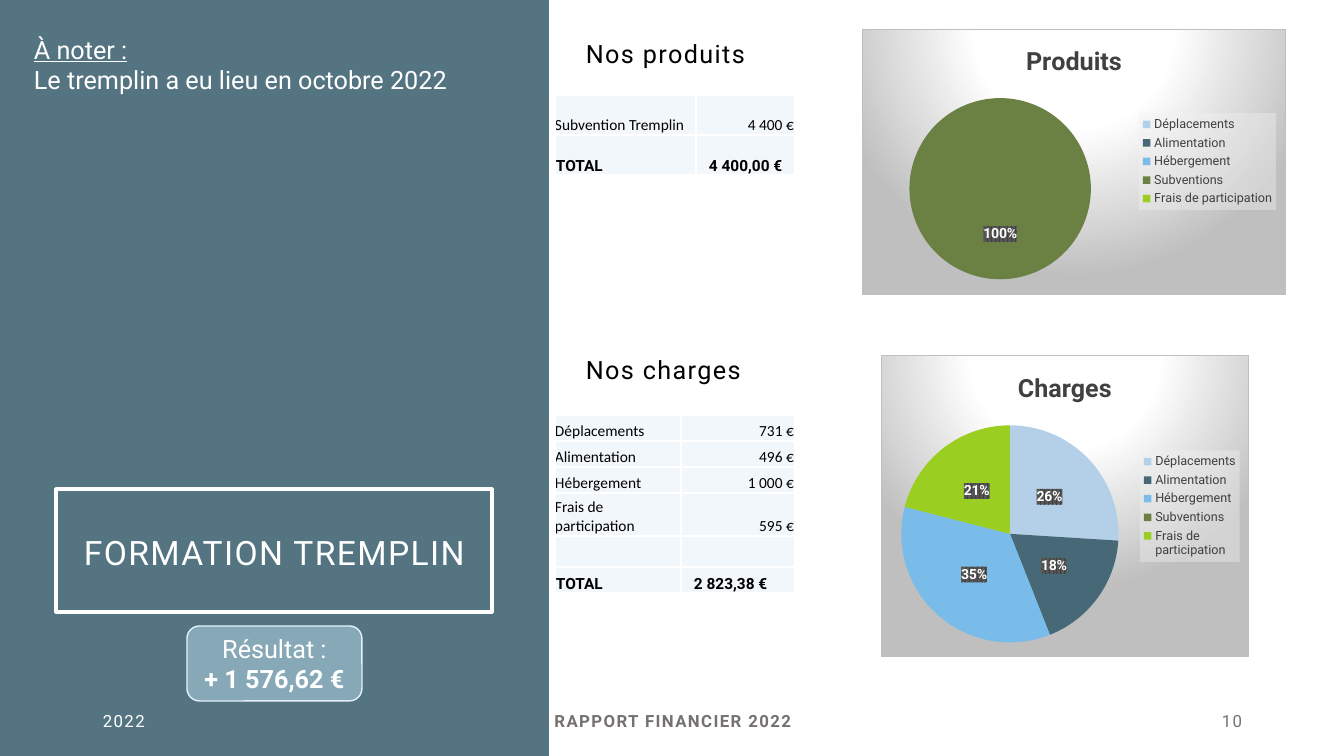
"""Build the financial report slide about the Tremplin training."""
from pptx import Presentation
from pptx.chart.data import CategoryChartData
from pptx.dml.color import RGBColor
from pptx.enum.chart import XL_CHART_TYPE, XL_LABEL_POSITION, XL_LEGEND_POSITION
from pptx.enum.shapes import MSO_SHAPE as SHAPE
from pptx.enum.text import MSO_ANCHOR as ANCHOR, PP_ALIGN as ALIGN
from pptx.oxml import parse_xml
from pptx.oxml.ns import nsdecls
from pptx.util import Emu, Pt

PX_PER_INCH = 100.8
CATEGORIES = ["Déplacements", "Alimentation", "Hébergement", "Subventions",
              "Frais de participation"]
SLICE_COLOURS = ["B4D0E9", "476977", "79BBE9", "6B8043", "9ACF21"]


def px(length):
    return Emu(round(length * 914400 / PX_PER_INCH))


def box_emu(box):
    return [px(length) for length in box]


def rgb(value):
    return RGBColor.from_string(value)


def solid_xml(colour, alpha=100):
    return (f'<a:solidFill {nsdecls("a")}><a:srgbClr val="{colour}">'
            f'<a:alpha val="{alpha * 1000}"/></a:srgbClr></a:solidFill>')


def chart_fill(fill, line=""):
    return parse_xml(f'<c:spPr {nsdecls("c", "a")}>{fill}{line}</c:spPr>')


def style_font(font, size, colour, bold=False, name="Roboto"):
    font.name, font.size, font.bold = name, Pt(size), bold
    font.color.rgb = rgb(colour)


def write(frame, text, size, colour, align=ALIGN.LEFT, bold=False, name="Roboto",
          spacing=0, line_spacing=None):
    frame.word_wrap = True
    frame.text = text
    for paragraph in frame.paragraphs:
        paragraph.alignment = align
        if line_spacing:
            paragraph.line_spacing = line_spacing
        for run in paragraph.runs:
            style_font(run.font, size, colour, bold, name)
            if spacing:
                run.font._element.set("spc", str(spacing * 100))


def add_label(slide, box, text, size, colour, anchor=ANCHOR.MIDDLE, **style):
    frame = slide.shapes.add_textbox(*box_emu(box)).text_frame
    write(frame, text, size, colour, **style)
    frame.vertical_anchor = anchor
    return frame


def add_block(slide, kind, box, fill=None, line=None, width=1):
    block = slide.shapes.add_shape(kind, *box_emu(box))
    block.shadow.inherit = False
    if fill:
        block.fill.solid()
        block.fill.fore_color.rgb = rgb(fill)
    else:
        block.fill.background()
    if line:
        block.line.color.rgb = rgb(line)
        block.line.width = Pt(width)
    else:
        block.line.fill.background()
    block.text_frame.vertical_anchor = ANCHOR.MIDDLE
    return block


def add_panel(slide):
    panel = add_block(slide, SHAPE.RECTANGLE, (0, 0, 549, 756), "476977")
    old_fill = panel.fill._xPr.solidFill if hasattr(panel.fill._xPr, "solidFill") \
        else panel.fill._xPr.xpath("a:solidFill")[0]
    old_fill.getparent().replace(old_fill, parse_xml(solid_xml("476977", 92)))
    panel.text_frame.margin_top = px(358)
    write(panel.text_frame, "FORMATION TREMPLIN", 24, "FFFFFF", ALIGN.CENTER,
          spacing=1, line_spacing=0.9)


def style_cell(cell, text, is_amount, is_total):
    cell.margin_left = px(13 if is_amount and is_total else 1 if is_total else 0)
    cell.margin_right = px(1)
    cell.margin_top = cell.margin_bottom = 0
    cell.vertical_anchor = ANCHOR.BOTTOM
    cell.fill.solid()
    cell.fill.fore_color.rgb = rgb("F2F7FB")
    for index, side in enumerate("LRTB"):
        cell._tc.get_or_add_tcPr().insert(index, parse_xml(
            f'<a:ln{side} {nsdecls("a")} w="12700">{solid_xml("FFFFFF")}</a:ln{side}>'))
    if text:
        align = ALIGN.RIGHT if is_amount and not is_total else ALIGN.LEFT
        write(cell.text_frame, text, 11, "000000", align, is_total,
              "Roboto" if is_total else "Calibri")


def add_amounts(slide, left, top, widths, heights, rows):
    table = slide.shapes.add_table(
        len(rows), 2, *box_emu((left, top, sum(widths), sum(heights)))).table
    table.first_row = table.horz_banding = False
    for column, width in zip(table.columns, widths):
        column.width = px(width)
    for row, height, texts in zip(table.rows, heights, rows):
        row.height = px(height)
        for index, (cell, text) in enumerate(zip(row.cells, texts)):
            style_cell(cell, text, index == 1, texts[0] == "TOTAL")


def layout_xml(box, chart_box, target=""):
    left, top, width, height = chart_box
    shares = {"x": (box[0] - left) / width, "y": (box[1] - top) / height,
              "w": box[2] / width, "h": box[3] / height}
    modes = '<c:xMode val="edge"/><c:yMode val="edge"/>'
    sizes = "".join(f'<c:{key} val="{share:.3f}"/>' for key, share in shares.items())
    return parse_xml(f'<c:layout {nsdecls("c")}><c:manualLayout>{target}{modes}{sizes}'
                     '</c:manualLayout></c:layout>')


def drop_layout(element):
    for layout in element.xpath("c:layout"):
        element.remove(layout)


def style_legend(chart, box, chart_box):
    chart.has_legend = True
    legend = chart.legend
    legend.position = XL_LEGEND_POSITION.RIGHT
    legend.include_in_layout = False
    style_font(legend.font, 9, "404040")
    element = legend._element
    drop_layout(element)
    element.xpath("c:legendPos")[0].addnext(layout_xml(box, chart_box))
    element.xpath("c:txPr")[0].addprevious(chart_fill(solid_xml("F2F2F2", 39)))


def style_slices(plot):
    plot.vary_by_categories = True
    series = plot.series[0]
    for index, colour in enumerate(SLICE_COLOURS):
        slice_format = series.points[index].format
        slice_format.fill.solid()
        slice_format.fill.fore_color.rgb = rgb(colour)
        slice_format.line.fill.background()
    labels = series.data_labels
    labels.show_percentage, labels.show_value = True, False
    labels.number_format, labels.number_format_is_linked = "0%", False
    labels.position = XL_LABEL_POSITION.CENTER
    style_font(labels.font, 10, "FFFFFF", True)
    labels._element.xpath("c:txPr")[0].addprevious(chart_fill(
        '<a:pattFill prst="pct75"><a:fgClr><a:srgbClr val="404040"/></a:fgClr>'
        '<a:bgClr><a:srgbClr val="595959"/></a:bgClr></a:pattFill>'))


def add_pie(slide, title, values, box, pie_box, legend_box):
    shares = CategoryChartData()
    shares.categories = CATEGORIES
    shares.add_series("Series 1", values)
    chart = slide.shapes.add_chart(XL_CHART_TYPE.PIE, *box_emu(box), shares).chart
    style_font(chart.font, 10, "000000")
    chart.has_title = True
    write(chart.chart_title.text_frame, title, 18, "404040", ALIGN.CENTER, True)
    style_slices(chart.plots[0])
    style_legend(chart, legend_box, box)
    plot_area = chart._chartSpace.xpath("c:chart/c:plotArea")[0]
    drop_layout(plot_area)
    plot_area.insert(0, layout_xml(pie_box, box, '<c:layoutTarget val="inner"/>'))
    stops = "".join(f'<a:gs pos="{position}000"><a:srgbClr val="{colour}"/></a:gs>'
                    for position, colour in ((0, "FFFFFF"), (39, "FFFFFF"), (100, "BFBFBF")))
    chart._chartSpace.xpath("c:chart")[0].addnext(chart_fill(
        f'<a:gradFill><a:gsLst>{stops}</a:gsLst><a:path path="circle">'
        '<a:fillToRect l="50000" t="-80000" r="50000" b="180000"/></a:path></a:gradFill>',
        f'<a:ln w="9525">{solid_xml("BFBFBF")}</a:ln>'))


def main():
    deck = Presentation()
    deck.slide_width, deck.slide_height = px(1344), px(756)
    slide = deck.slides.add_slide(deck.slide_layouts[6])
    add_panel(slide)
    add_label(slide, (93, 701, 302, 40), "2022", 12, "FFFFFF", spacing=1)
    add_label(slide, (446, 701, 454, 40), "RAPPORT FINANCIER 2022", 12, "767171",
              align=ALIGN.CENTER, bold=True, spacing=1)
    add_label(slide, (950, 701, 302, 40), "10", 12, "767171", align=ALIGN.RIGHT, spacing=1)
    for heading, top in (("Nos produits", 15), ("Nos charges", 331)):
        add_label(slide, (576, top, 646, 47), heading, 18, "000000",
                  spacing=1, line_spacing=2)
    add_block(slide, SHAPE.RECTANGLE, (56, 489, 436, 123), line="FFFFFF", width=2.25)
    add_amounts(slide, 555, 95, (141, 99), (40, 40),
                [("Subvention Tremplin", "4 400 €"), ("TOTAL", "4 400,00 €")])
    add_amounts(slide, 555, 415, (126, 114), (26, 26, 26, 43, 31, 26),
                [("Déplacements", "731 €"), ("Alimentation", "496 €"),
                 ("Hébergement", "1 000 €"), ("Frais de participation", "595 €"),
                 ("", ""), ("TOTAL", "2 823,38 €")])
    note = add_label(slide, (24, 29, 478, 102),
                     "À noter :\nLe tremplin a eu lieu en octobre 2022",
                     18, "FFFFFF", ANCHOR.TOP)
    note.paragraphs[0].runs[0].font.underline = True
    result = add_block(slide, SHAPE.ROUNDED_RECTANGLE, (187, 626, 175, 75),
                       "87A9B7", "E4F1FB").text_frame
    write(result, "Résultat :\n+ 1 576,62 €", 18, "FFFFFF", ALIGN.CENTER)
    result.paragraphs[1].runs[0].font.bold = True
    add_pie(slide, "Produits", (None, None, None, 100, None), (862, 29, 424, 266),
            (909, 98, 182, 182), (1139, 113, 138, 97))
    add_pie(slide, "Charges", (26, 18, 35, None, 21), (881, 355, 368, 302),
            (901, 425, 218, 218), (1140, 450, 100, 112))
    deck.save("out.pptx")


if __name__ == "__main__":
    main()
